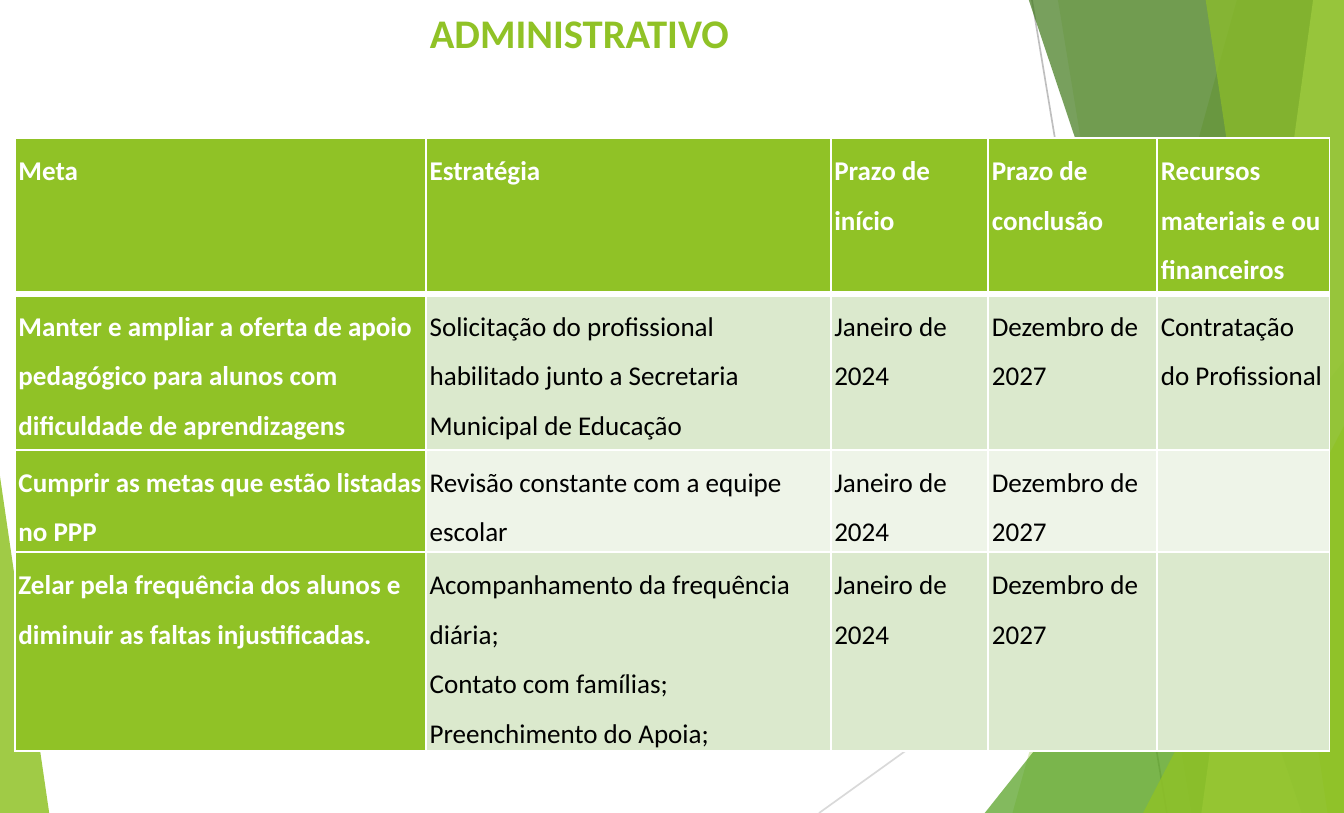
import pptx
import pptx.util
import pptx.dml.color
import pptx.enum.shapes
import pptx.enum.text
import pptx.oxml
import pptx.oxml.ns
from lxml import etree

Pt = pptx.util.Pt
WIDE, HIGH = 595.44, 360
GREEN, WHITE, BLACK = "90C226", "FFFFFF", "000000"
TINTS = ("DBE9CD", "EEF4E8")

COLS = (182.16, 179.28, 69.84, 74.88, 76.32)
ROWS = (69, 69, 45.4, 87.6)
START, END = "Janeiro de 2024", "Dezembro de 2027"
GOALS = (
    ("Meta", "Estratégia", "Prazo de início", "Prazo de conclusão",
     "Recursos materiais e ou financeiros"),
    ("Manter e ampliar a oferta de apoio pedagógico para alunos com "
     "dificuldade de aprendizagens",
     "Solicitação do profissional habilitado junto a Secretaria "
     "Municipal de Educação", START, END, "Contratação do Profissional"),
    ("Cumprir as metas que estão listadas no PPP",
     "Revisão constante com a equipe escolar", START, END, ""),
    ("Zelar pela frequência dos alunos e diminuir as faltas injustificadas.",
     "Acompanhamento da frequência diária;\nContato com famílias;\n"
     "Preenchimento do Apoia;", START, END, ""),
)


def rgb(code):
    return pptx.dml.color.RGBColor.from_string(code)


def sub(node, tag, **attrs):
    return etree.SubElement(node, pptx.oxml.ns.qn(tag), attrs)


def paint(shape, code, alpha):
    """Fill a shape with a see-through colour, with no outline or shadow."""
    shape.shadow.inherit = False
    shape.line.fill.background()
    shape.fill.solid()
    shape.fill.fore_color.rgb = rgb(code)
    color = shape.element.spPr.find(".//" + pptx.oxml.ns.qn("a:srgbClr"))
    sub(color, "a:alpha", val=str(alpha * 1000))


def style(para, size, code, bold):
    para.font.name = "Calibri"
    para.font.size = Pt(size)
    para.font.bold = bold
    para.font.color.rgb = rgb(code)


def edge(cell, side, width):
    line = sub(cell._tc.get_or_add_tcPr(), "a:ln" + side, w=str(Pt(width)))
    sub(sub(line, "a:solidFill"), "a:srgbClr", val=WHITE)


def decor(slide, left, top, wide, high):
    """Green facets along the right edge and in the lower left corner."""
    shapes = slide.shapes
    right, base = left + wide, top + high

    def rule(x1, y1, x2, y2, code):
        line = shapes.add_connector(
            pptx.enum.shapes.MSO_CONNECTOR.STRAIGHT,
            Pt(left + x1), Pt(top + y1), Pt(left + x2), Pt(top + y2))
        line.line.color.rgb = rgb(code)
        line.line.width = Pt(0.75)
        sub(line.element.spPr, "a:effectLst")

    def band(upper, lower, code, alpha):
        form = shapes.build_freeform(Pt(left + upper), Pt(top))
        form.add_line_segments(
            [(Pt(right), Pt(top)), (Pt(right), Pt(base)),
             (Pt(left + lower), Pt(base))], close=True)
        paint(form.convert_to_shape(), code, alpha)

    def wedge(x, width, height, tip, code, alpha):
        shape = shapes.add_shape(
            pptx.enum.shapes.MSO_SHAPE.ISOSCELES_TRIANGLE,
            Pt(left + x), Pt(base - height), Pt(width), Pt(height))
        shape.adjustments[0] = tip
        paint(shape, code, alpha)

    rule(457.2, 0, 517, high, "BFBFBF")
    rule(wide, 193, 362.9, high, "D9D9D9")
    band(548, 448.6, GREEN, 30)
    band(468.7, 527.8, GREEN, 20)
    wedge(436.3, wide - 436.3, 200.2, 1, "54A021", 72)
    band(455.8, 576.7, "3F7819", 70)
    band(581.8, 532.3, "C0E474", 70)
    band(534.2, 588.2, GREEN, 65)
    wedge(506.4, wide - 506.4, 171.4, 1, GREEN, 80)
    wedge(0, 21.8, 149, 0, GREEN, 85)


def heading(slide, left, top, wide, high):
    title = slide.shapes.title
    title.left, title.top = Pt(left), Pt(top)
    title.width, title.height = Pt(wide), Pt(high)
    frame = title.text_frame
    frame.text = "ADMINISTRATIVO"
    frame.vertical_anchor = pptx.enum.text.MSO_ANCHOR.TOP
    para = frame.paragraphs[0]
    para.alignment = pptx.enum.text.PP_ALIGN.CENTER
    style(para, 18, GREEN, True)
    # Bring the title in front of the facets
    title.element.getparent().append(title.element)


def plan(slide, left, top):
    """Table of goals, with a green header row and first column."""
    table = slide.shapes.add_table(
        len(ROWS), len(COLS), Pt(left), Pt(top),
        Pt(sum(COLS)), Pt(sum(ROWS))).table
    for col, width in zip(table.columns, COLS):
        col.width = Pt(width)
    for row, height in zip(table.rows, ROWS):
        row.height = Pt(height)

    for r, goal in enumerate(GOALS):
        for c, text in enumerate(goal):
            cell = table.cell(r, c)
            strong = r == 0 or c == 0
            cell.margin_left = cell.margin_right = Pt(1.6)
            cell.margin_top = cell.margin_bottom = 0
            cell.text = text
            for para in cell.text_frame.paragraphs:
                para.line_spacing = 1.5
                style(para, 12, WHITE if strong else BLACK, strong)
            # Borders come before the fill in the cell properties
            for side in "LRTB":
                thick = (r, side) in ((0, "B"), (1, "T"))
                edge(cell, side, 3 if thick else 1)
            cell.fill.solid()
            cell.fill.fore_color.rgb = rgb(
                GREEN if strong else TINTS[(r - 1) % 2])


def main():
    deck = pptx.Presentation()
    deck.slide_width, deck.slide_height = Pt(WIDE), Pt(HIGH)
    slide = deck.slides.add_slide(deck.slide_layouts[5])
    decor(slide, 0, 0, WIDE, HIGH)
    heading(slide, 0, 0, 513.4, 69.8)
    plan(slide, 6.6, 61.2)
    deck.save("out.pptx")


if __name__ == "__main__":
    main()
